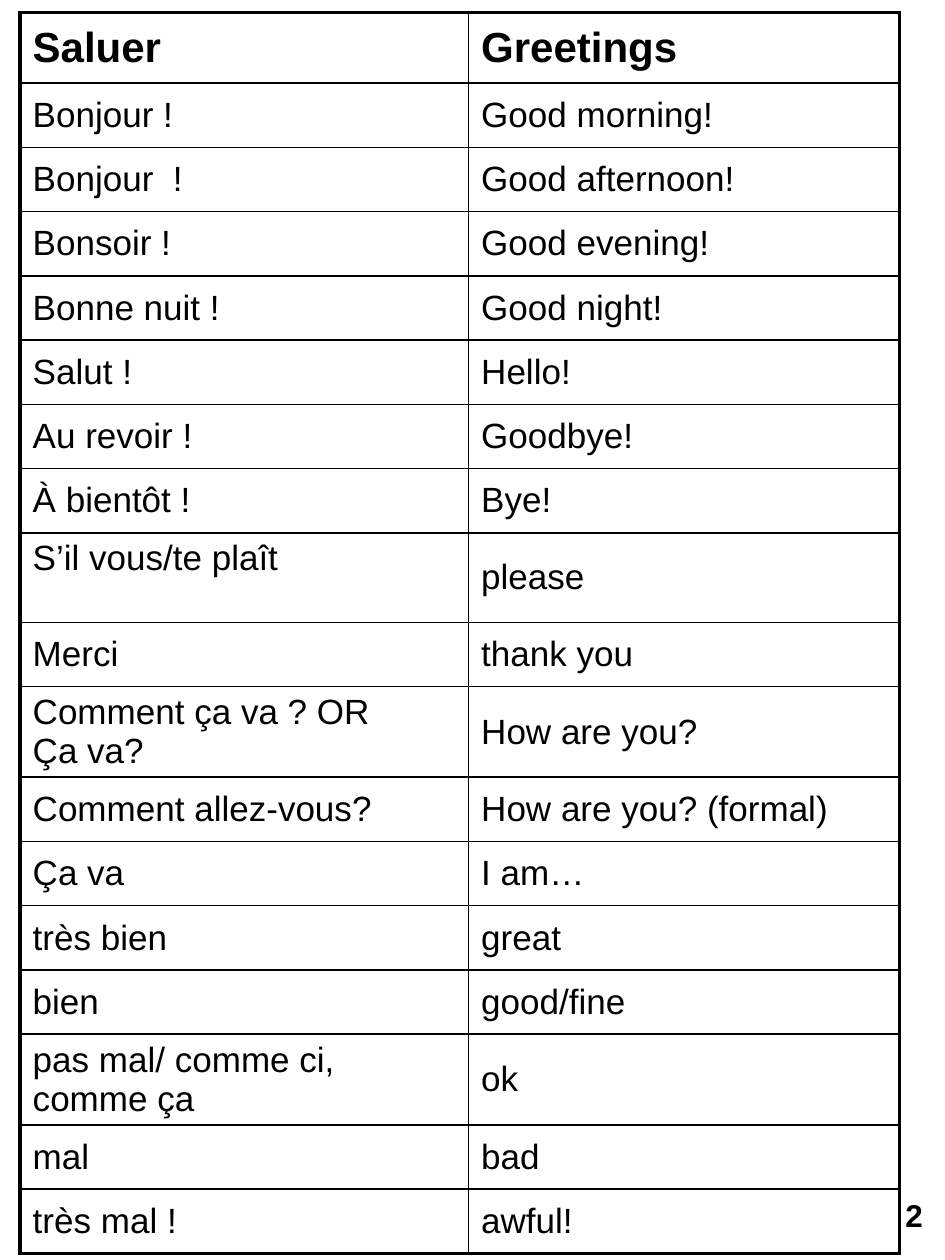
import pptx
import pptx.util
import pptx.dml.color
import pptx.enum.shapes
import pptx.enum.text
import pptx.oxml
import pptx.oxml.ns

Inches = pptx.util.Inches
Pt = pptx.util.Pt
ANCHOR = pptx.enum.text.MSO_ANCHOR
BLACK = pptx.dml.color.RGBColor(0, 0, 0)
THICK, THIN = 2.25, 1

PHRASES = [
    ("Saluer", "Greetings"),
    ("Bonjour !", "Good morning!"),
    ("Bonjour  !", "Good afternoon!"),
    ("Bonsoir !", "Good evening!"),
    ("Bonne nuit !", "Good night!"),
    ("Salut !", "Hello!"),
    ("Au revoir !", "Goodbye!"),
    ("À bientôt !", "Bye!"),
    ("S’il vous/te plaît", "please"),
    ("Merci", "thank you"),
    ("Comment ça va ? OR \vÇa va?", "How are you?"),
    ("Comment allez-vous?", "How are you? (formal)"),
    ("Ça va", "I am…"),
    ("très bien", "great"),
    ("bien", "good/fine"),
    ("pas mal/ comme ci, comme ça", "ok"),
    ("mal", "bad"),
    ("très mal !", "awful!"),
]
PLEASE_ROW = 8
ROW_HEIGHTS = {0: 0.56, PLEASE_ROW: 0.71, 10: 0.71, 15: 0.71}
COLUMN_SHARES = (0.51, 0.49)


def format_text(p, size, bold):
    style = {"name": "Arial", "size": Pt(size), "bold": bold}
    for r in p.runs:
        for key, value in style.items():
            setattr(r.font, key, value)
        r.font.color.rgb = BLACK


def set_borders(cell, widths):
    """Draw solid borders; widths maps L, R, T, B (in that order) to points."""
    tc_pr = cell._tc.get_or_add_tcPr()
    for i, (side, width) in enumerate(widths.items()):
        tc_pr.insert(i, pptx.oxml.parse_xml(
            f'<a:ln{side} {pptx.oxml.ns.nsdecls("a")} w="{Pt(width)}">'
            f'<a:solidFill><a:srgbClr val="{BLACK}"/></a:solidFill>'
            f'</a:ln{side}>'))


def add_phrase_table(s, left, top, width, height):
    last = len(PHRASES) - 1
    table = s.shapes.add_table(len(PHRASES), 2, left, top, width, height).table
    table.first_row = table.horz_banding = False
    for column, share in zip(table.columns, COLUMN_SHARES):
        column.width = int(width * share)

    for i, phrases in enumerate(PHRASES):
        table.rows[i].height = Inches(ROW_HEIGHTS.get(i, 0.51))
        for j, phrase in enumerate(phrases):
            cell = table.cell(i, j)
            cell.text = phrase
            cell.vertical_anchor = ANCHOR.MIDDLE
            cell.fill.background()
            format_text(cell.text_frame.paragraphs[0], 20 if i else 24, i == 0)
            # Thick frame outside, thin grid inside
            set_borders(cell, {
                "L": THICK if j == 0 else THIN,
                "R": THICK if j == 1 else THIN,
                "T": THICK if i == 0 else THIN,
                "B": THICK if i == last else THIN,
            })
    table.cell(PLEASE_ROW, 0).vertical_anchor = ANCHOR.TOP


def add_page_number(s, left, top, width, height):
    sp = s.shapes.add_shape(
        pptx.enum.shapes.MSO_SHAPE.ROUNDED_RECTANGLE, left, top, width, height)
    sp.shadow.inherit = False
    sp.fill.background()
    sp.line.fill.background()
    tf = sp.text_frame
    tf.vertical_anchor = ANCHOR.MIDDLE
    p = tf.paragraphs[0]
    p.text = "2"
    p.alignment = pptx.enum.text.PP_ALIGN.CENTER
    format_text(p, 18, True)


def main():
    prs = pptx.Presentation()
    prs.slide_width, prs.slide_height = Inches(7.5), Inches(10)
    s = prs.slides.add_slide(prs.slide_layouts[6])
    add_page_number(s, Inches(6.98), Inches(9.41), Inches(0.55), Inches(0.47))
    add_phrase_table(s, Inches(0.16), Inches(0.1), Inches(6.98), Inches(9.73))
    prs.save("out.pptx")


if __name__ == "__main__":
    main()
